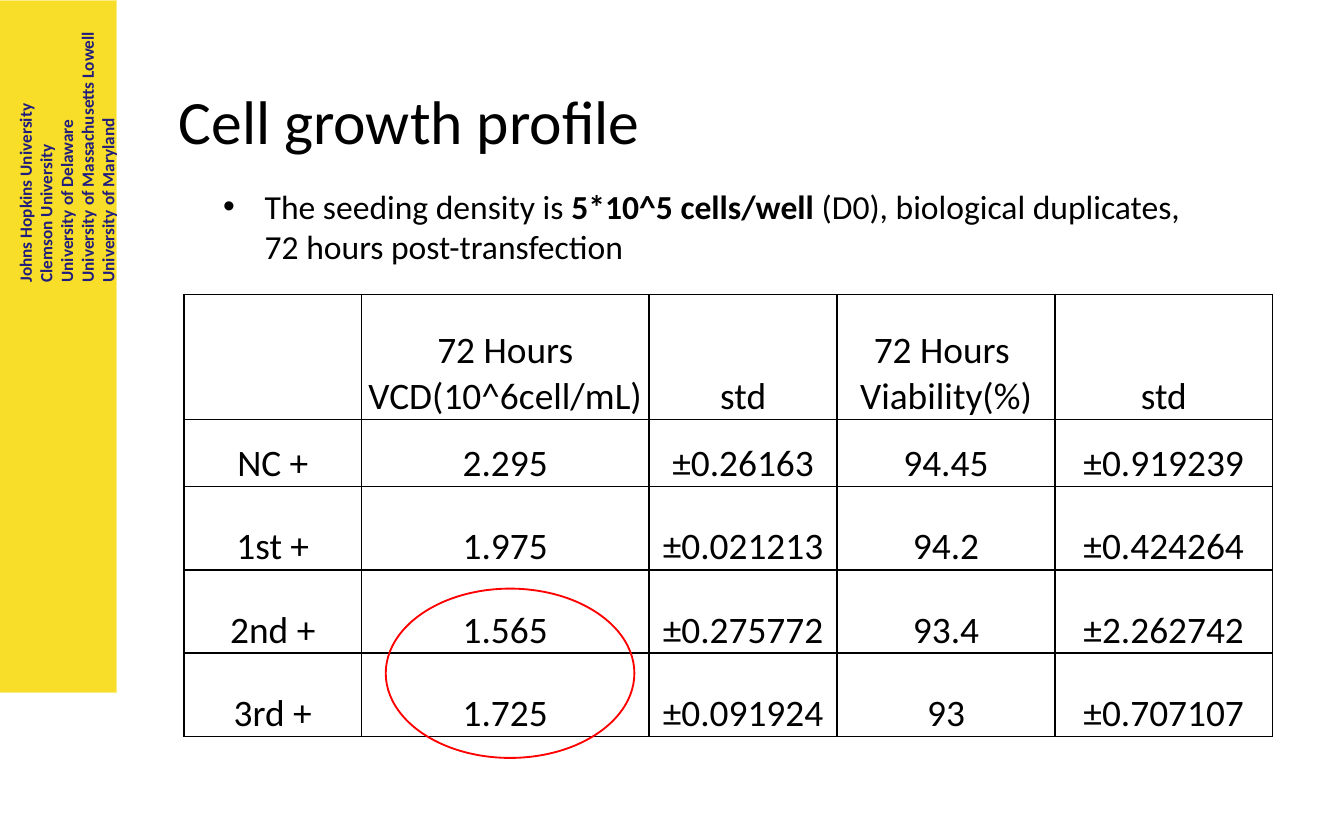
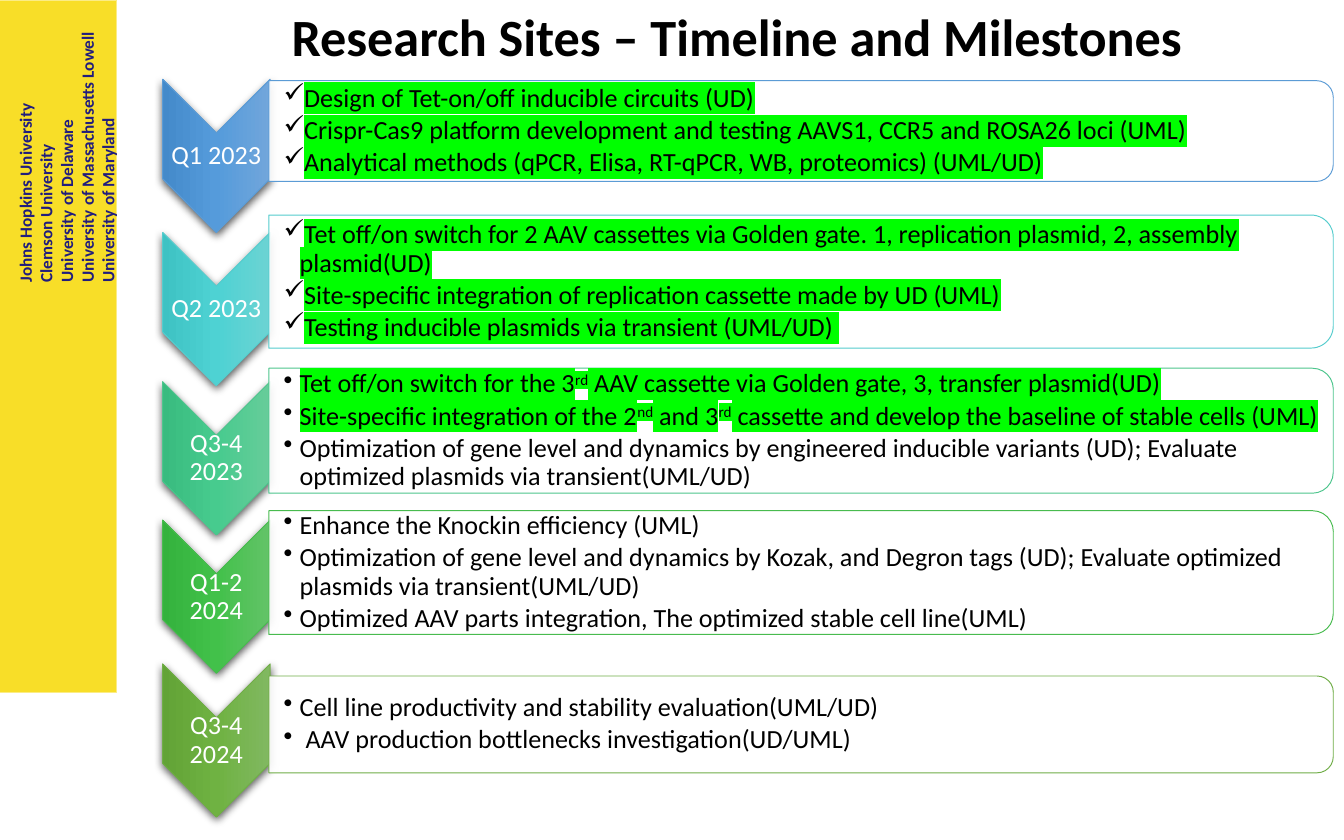
from lxml import etree
from pptx import Presentation
from pptx.dml.color import RGBColor
from pptx.enum.shapes import MSO_SHAPE
from pptx.enum.text import MSO_ANCHOR, MSO_AUTO_SIZE, PP_ALIGN
from pptx.oxml.ns import qn
from pptx.util import Inches, Pt

RECTANGLE = MSO_SHAPE.RECTANGLE
OVAL = MSO_SHAPE.OVAL
CHEVRON = MSO_SHAPE.CHEVRON
CARD = MSO_SHAPE.ROUND_2_SAME_RECTANGLE
TOP, MIDDLE, BOTTOM = MSO_ANCHOR.TOP, MSO_ANCHOR.MIDDLE, MSO_ANCHOR.BOTTOM
LEFT, CENTER = PP_ALIGN.LEFT, PP_ALIGN.CENTER
NO_AUTOFIT = MSO_AUTO_SIZE.NONE
TITLE_AND_BODY, TITLE_ONLY = 1, 5

FONT = "Calibri"
COLORS = {
    "text": "000000",
    "white": "FFFFFF",
    "band": "F8DE28",
    "band edge": "FBEC85",
    "navy": "211D7D",
    "red": "FF0000",
    "done": "00FF00",
}
UNIVERSITIES = [
    "Johns Hopkins University",
    "Clemson University",
    "University of Delaware",
    "University of Massachusetts Lowell",
    "University of Maryland",
]

GROWTH_COLUMNS = [1.32, 2.14, 1.4, 1.62, 1.62]
GROWTH_ROWS = [0.93, 0.5, 0.62, 0.62, 0.62]
GROWTH = [
    ["", "72 Hours VCD(10^6cell/mL)", "std", "72 Hours \nViability(%)", "std"],
    ["NC +", "2.295", "±0.26163", "94.45", "±0.919239"],
    ["1st +", "1.975", "±0.021213", "94.2", "±0.424264"],
    ["2nd +", "1.565", "±0.275772", "93.4", "±2.262742"],
    ["3rd +", "1.725", "±0.091924", "93", "±0.707107"],
]

# fields: label, chevron top, card top, card height, edge, gradient, bullet, tasks
# task: done flag, then text pieces in which every second one is superscript
MILESTONES = [
    ("Q1 2023", 0.59, 0.6, 0.75, "5B9BD5", ["71A6DB", "559BDB", "448ACA"], "✓", [
        (True, ["Design of Tet-on/off inducible circuits (UD)"]),
        (True, ["Crispr-Cas9 platform development and testing AAVS1, CCR5 and ROSA26 loci (UML)"]),
        (True, ["Analytical methods (qPCR, Elisa, RT-qPCR, WB, proteomics) (UML/UD)"]),
    ]),
    ("Q2 2023", 1.73, 1.6, 0.99, "54CCCD", ["6CD3D3", "4ED2D3", "3EC2C3"], "✓", [
        (True, ["Tet off/on switch for 2 AAV cassettes via Golden gate. "
                "1, replication plasmid, 2, assembly plasmid(UD)"]),
        (True, ["Site-specific integration of replication cassette made by UD (UML)"]),
        (True, ["Testing inducible plasmids via transient (UML/UD) "]),
    ]),
    ("Q3-4 2023", 2.84, 2.74, 0.93, "4DC58D", ["67CC9A", "47CB8E", "39BB7F"], "•", [
        (True, ["Tet off/on switch for the 3", "rd",
                " AAV cassette via Golden gate, 3, transfer plasmid(UD)"]),
        (True, ["Site-specific integration of the 2", "nd", " and 3", "rd",
                " cassette and develop the baseline of stable cells (UML)"]),
        (False, ["Optimization of gene level and dynamics by engineered inducible variants (UD); "
                 "Evaluate optimized plasmids via transient(UML/UD)"]),
    ]),
    ("Q1-2 2024", 3.87, 3.8, 0.92, "48BB4F", ["63C368", "42C14A", "34B23D"], "•", [
        (False, ["Enhance the Knockin efficiency (UML)"]),
        (False, ["Optimization of gene level and dynamics by Kozak, and Degron tags (UD); "
                 "Evaluate optimized plasmids via transient(UML/UD)"]),
        (False, ["Optimized AAV parts integration, The optimized stable cell line(UML)"]),
    ]),
    ("Q3-4 2024", 4.94, 5.03, 0.72, "70AD47", ["81B861", "6FB242", "62A336"], "•", [
        (False, ["Cell line productivity and stability evaluation(UML/UD)"]),
        (False, [" AAV production bottlenecks investigation(UD/UML)"]),
    ]),
]


def add_element(parent, tag, **attributes):
    """Append a DrawingML element and return it."""
    return etree.SubElement(parent, qn(tag), {key: str(value) for key, value in attributes.items()})


class Deck:
    """Holds the presentation, its style and the current slide."""

    def __init__(self):
        """Open an empty presentation of the right size."""
        self.presentation = Presentation()
        self.presentation.slide_width = Inches(10)
        self.presentation.slide_height = Inches(6.25)
        self.slide = None

    def new_slide(self, layout):
        """Start a slide with the shared side band."""
        layouts = self.presentation.slide_layouts
        self.slide = self.presentation.slides.add_slide(layouts[layout])
        self.shape(RECTANGLE, 0, 0, 0.87, 5.15, COLORS["band edge"], 0.5, COLORS["band"])
        frame = self.text_box(-0.6, 0.78, 2.08, 0.76, rotation=270)
        frame.word_wrap = False
        for index, name in enumerate(UNIVERSITIES):
            self.run(self.paragraph(frame, index), name, 9.2, COLORS["navy"], bold=True)

    def paragraph(self, frame, index, align=LEFT, line_spacing=None):
        """Return the paragraph of a frame at the next index."""
        paragraph = frame.add_paragraph() if index else frame.paragraphs[0]
        paragraph.alignment = align
        if line_spacing:
            paragraph.line_spacing = line_spacing
        return paragraph

    def bullet(self, paragraph, character, indent):
        """Give a paragraph a bullet with a hanging indent."""
        properties = paragraph._p.get_or_add_pPr()
        properties.set("marL", str(Inches(indent)))
        properties.set("indent", str(-Inches(indent)))
        add_element(properties, "a:buChar", char=character)

    def run(self, paragraph, text, size, color=COLORS["text"], bold=False,
            highlight=None, superscript=False):
        """Add one formatted run."""
        run = paragraph.add_run()
        run.text = text
        run.font.size = Pt(size)
        run.font.bold = bold
        run.font.color.rgb = RGBColor.from_string(color)
        properties = run.font._element
        if highlight:
            add_element(add_element(properties, "a:highlight"), "a:srgbClr", val=highlight)
        if superscript:
            properties.set("baseline", "30000")
        run.font.name = FONT

    def place(self, shape, left, top, width, height):
        """Move and size a placeholder, and return its text frame."""
        shape.left, shape.top = Inches(left), Inches(top)
        shape.width, shape.height = Inches(width), Inches(height)
        shape.text_frame.auto_size = NO_AUTOFIT
        return shape.text_frame

    def title(self, text, box, size, bold=False, align=LEFT, line_spacing=None):
        """Fill the title placeholder."""
        frame = self.place(self.slide.shapes.title, *box)
        frame.vertical_anchor = MIDDLE
        self.run(self.paragraph(frame, 0, align, line_spacing), text, size, bold=bold)

    def body(self, pieces, box, size):
        """Fill the body placeholder with one bullet; every second piece is bold."""
        frame = self.place(self.slide.placeholders[1], *box)
        frame.vertical_anchor = TOP
        paragraph = self.paragraph(frame, 0)
        self.bullet(paragraph, "•", 0.31)
        paragraph.space_before = Pt(0)
        for index, piece in enumerate(pieces):
            self.run(paragraph, piece, size, bold=index % 2 == 1)

    def text_box(self, left, top, width, height, rotation=0, anchor=TOP, margins=None):
        """Add a wrapping text box and return its frame."""
        box = self.slide.shapes.add_textbox(
            Inches(left), Inches(top), Inches(width), Inches(height))
        box.rotation = rotation
        frame = box.text_frame
        frame.word_wrap = True
        frame.vertical_anchor = anchor
        if margins:
            (frame.margin_left, frame.margin_top,
             frame.margin_right, frame.margin_bottom) = map(Inches, margins)
        return frame

    def shape(self, kind, left, top, width, height, line, weight, fill=None):
        """Add an outlined preset shape."""
        shape = self.slide.shapes.add_shape(
            kind, Inches(left), Inches(top), Inches(width), Inches(height))
        shape.shadow.inherit = False
        shape.line.color.rgb = RGBColor.from_string(line)
        shape.line.width = Pt(weight)
        if fill:
            shape.fill.solid()
            shape.fill.fore_color.rgb = RGBColor.from_string(fill)
        else:
            shape.fill.background()
        return shape

    def turned_shape(self, kind, left, top, width, height, line, fill):
        """Add a shape turned by 90 degrees that covers the given box."""
        shift = (width - height) / 2
        shape = self.shape(kind, left + shift, top - shift, height, width, line, 0.5, fill)
        shape.rotation = 90
        return shape

    def chevron(self, left, top, width, height, line, gradient):
        """Add a downward chevron with a gradient and a soft shadow."""
        shape = self.turned_shape(CHEVRON, left, top, width, height, line, gradient[0])
        properties = shape._element.spPr
        solid = properties.find(qn("a:solidFill"))
        fill = etree.Element(qn("a:gradFill"), rotWithShape="1")
        properties.replace(solid, fill)
        stops = add_element(fill, "a:gsLst")
        for index, color in enumerate(gradient):
            add_element(add_element(stops, "a:gs", pos=index * 50000), "a:srgbClr", val=color)
        add_element(fill, "a:lin", ang=5400000, scaled=0)
        shadow = add_element(properties.find(qn("a:effectLst")), "a:outerShdw", blurRad=Pt(4.5),
                             dist=Pt(1.5), dir=5400000, algn="ctr", rotWithShape=0)
        add_element(add_element(shadow, "a:srgbClr", val=COLORS["text"]), "a:alpha", val=63000)

    def card(self, left, top, width, height, line):
        """Add a slightly transparent card, rounded on the right."""
        shape = self.turned_shape(CARD, left, top, width, height, line, COLORS["white"])
        color = shape._element.spPr.find(qn("a:solidFill")).find(qn("a:srgbClr"))
        add_element(color, "a:alpha", val=90000)

    def milestone(self, label, chevron_top, card_top, card_height, edge, gradient, bullet, tasks):
        """Add a dated chevron and the card with its tasks."""
        self.chevron(1.21, chevron_top, 0.8, 1.14, edge, gradient)
        frame = self.text_box(1.21, chevron_top + 0.4, 0.8, 0.34, anchor=MIDDLE, margins=[0.01] * 4)
        self.run(self.paragraph(frame, 0, CENTER, 0.9), label, 14, COLORS["white"])
        self.card(2, card_top, 7.92, card_height, edge)
        frame = self.text_box(2, card_top + 0.04, 7.87, card_height - 0.08,
                              anchor=MIDDLE, margins=[0.11, 0.01, 0.01, 0.01])
        for index, (done, pieces) in enumerate(tasks):
            paragraph = self.paragraph(frame, index, line_spacing=0.9)
            paragraph.level = 1
            self.bullet(paragraph, bullet, 0.12)
            paragraph.space_after = Pt(2.1)
            for position, piece in enumerate(pieces):
                self.run(paragraph, piece, 14, highlight=COLORS["done"] if done else None,
                         superscript=position % 2 == 1)

    def table(self, left, top, columns, rows, values, size):
        """Add a plain ruled table."""
        table = self.slide.shapes.add_table(
            len(rows), len(columns), Inches(left), Inches(top),
            Inches(sum(columns)), Inches(sum(rows))).table
        table.first_row = table.horz_banding = False
        for column, width in zip(table.columns, columns):
            column.width = Inches(width)
        for row, height, texts in zip(table.rows, rows, values):
            row.height = Inches(height)
            for cell, text in zip(row.cells, texts):
                self.cell(cell, text, size)

    def cell(self, cell, text, size):
        """Format one table cell and write its lines."""
        cell.vertical_anchor = BOTTOM
        cell.margin_left = cell.margin_top = cell.margin_right = Inches(0.01)
        cell.margin_bottom = 0
        properties = cell._tc.get_or_add_tcPr()
        for side in "LRTB":
            border = add_element(properties, f"a:ln{side}", w=Pt(1))
            add_element(add_element(border, "a:solidFill"), "a:srgbClr", val=COLORS["text"])
        cell.fill.background()
        if text:
            for index, line in enumerate(text.split("\n")):
                self.run(self.paragraph(cell.text_frame, index, CENTER), line, size)


def main():
    """Build both slides and save them."""
    deck = Deck()

    deck.new_slide(TITLE_AND_BODY)
    deck.title("Cell growth profile", (1.23, 0.32, 8.62, 1.21), 33, line_spacing=0.9)
    deck.table(1.37, 2.19, GROWTH_COLUMNS, GROWTH_ROWS, GROWTH, 20)
    deck.body(["The seeding density is ", "5*10^5 cells/well ",
               "(D0), biological duplicates, 72 hours post-transfection"],
              (1.56, 1.33, 7.59, 0.71), 18)
    deck.shape(OVAL, 2.87, 4.38, 1.85, 1.26, COLORS["red"], 1)

    deck.new_slide(TITLE_ONLY)
    deck.title("Research Sites – Timeline and Milestones", (1.54, -0.02, 7.88, 0.57), 28,
               bold=True, align=CENTER)
    for milestone in MILESTONES:
        deck.milestone(*milestone)

    deck.presentation.save("out.pptx")


if __name__ == "__main__":
    main()
